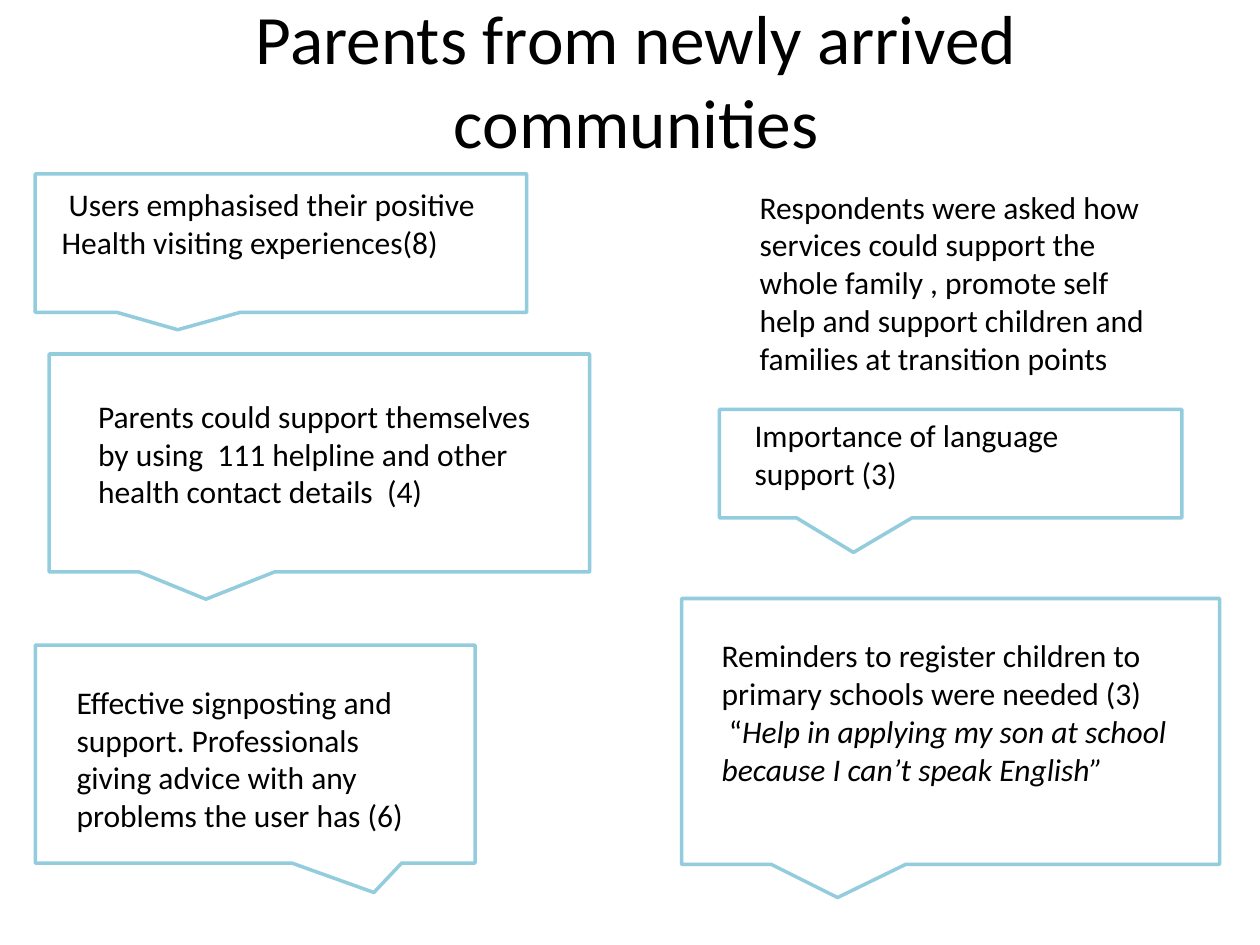
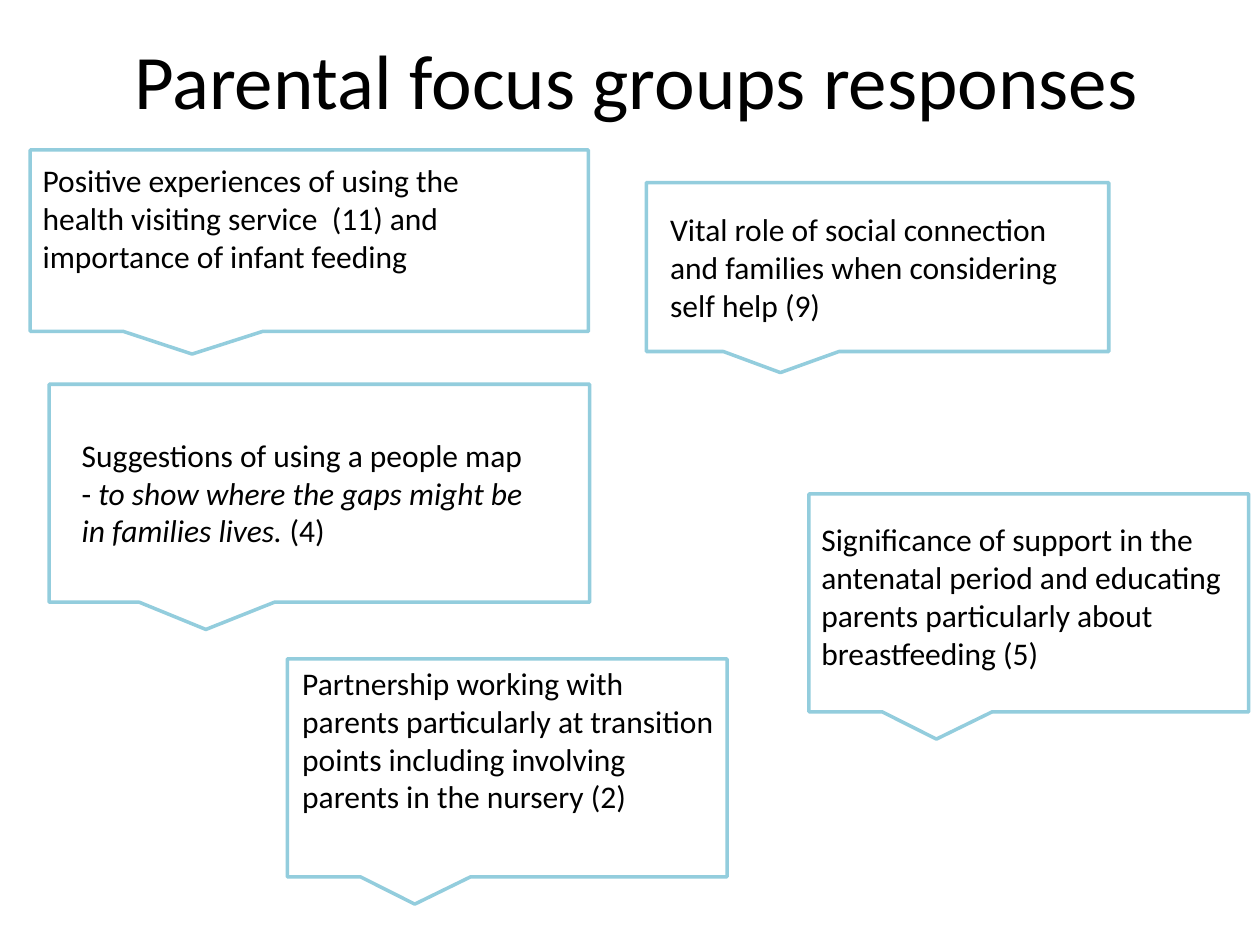
from dataclasses import dataclass
from typing import NamedTuple, Optional

from pptx import Presentation
from pptx.dml.color import RGBColor
from pptx.enum.shapes import MSO_SHAPE as Shape
from pptx.enum.text import MSO_ANCHOR as Anchor, MSO_AUTO_SIZE as AutoSize, PP_ALIGN as Align
from pptx.util import Inches, Pt

# Shared look
BLACK = RGBColor(0x00, 0x00, 0x00)
SKY = RGBColor(0x93, 0xCD, 0xDD)
FONT = "Calibri"
BODY_SIZE = 18
LINE_WIDTH = 2
TITLE_ONLY = 5

# Grid of 100 columns by 75 rows
WIDTH, HEIGHT = Inches(10), Inches(7.5)
COL, ROW = WIDTH / 100, HEIGHT / 75


class Box(NamedTuple):
    col: float
    row: float
    cols: float
    rows: float

    def lengths(self) -> tuple[int, int, int, int]:
        return (round(self.col * COL), round(self.row * ROW),
                round(self.cols * COL), round(self.rows * ROW))


class Run(NamedTuple):
    text: str
    italic: bool = False


@dataclass
class Note:
    """Text with an optional speech bubble around it."""
    box: Box
    paragraphs: list[list[Run]]
    bubble: Optional[Box] = None
    tip: tuple[float, float] = (-0.21, 0.625)


@dataclass
class Page:
    title: str
    title_size: float
    notes: list[Note]


TITLE_BOX = Box(5.5, 0, 90, 12.5)

PAGES = [
    Page("Parents from newly arrived communities", 39.6, [
        Note(Box(3.9, 14.2, 41.3, 7.1),
             [[Run(" Users emphasised their positive Health visiting experiences(8)")]],
             Box(2.8, 13.8, 39, 11)),
        Note(Box(6.8, 31, 36.9, 10.1),
             [[Run("Parents could support themselves by using  111 helpline and other "
                   "health contact details  (4)")]],
             Box(3.9, 28.1, 42.9, 17.3)),
        Note(Box(5.1, 53.7, 30.3, 13.1),
             [[Run("Effective signposting and support. Professionals giving advice with "
                   "any problems the user has (6)")]],
             Box(2.8, 51.2, 34.9, 17.3), tip=(0.27, 0.635)),
        Note(Box(59.3, 14.4, 33.1, 16.2),
             [[Run("Respondents were asked how services could support the whole family , "
                   "promote self help and support children and families at transition points")]]),
        Note(Box(58.9, 32.5, 33.1, 7.1),
             [[Run("Importance of language support (3)")]],
             Box(57.1, 32.5, 36.7, 8.6), tip=(-0.21, 0.82)),
        Note(Box(56.3, 50, 38.4, 13.1),
             [[Run("Reminders to register children to primary schools were needed (3)")],
              [Run(" “"),
               Run("Help in applying my son at school because I can’t speak English”", True)]],
             Box(54.1, 47.5, 42.7, 21.1)),
    ]),
    Page("Parental focus groups responses", 44, [
        Note(Box(2.4, 12.3, 41.3, 10.1),
             [[Run("Positive experiences of using the health visiting service  (11) and "
                   "importance of infant feeding")]],
             Box(2.4, 11.9, 44.3, 14.4)),
        Note(Box(5.5, 34.1, 38.1, 10.1),
             [[Run("Suggestions of using a people map - "),
               Run("to show where the gaps might be in families lives. ", True),
               Run("(4)")]],
             Box(3.9, 30.5, 42.9, 17.3)),
        Note(Box(52.2, 16.2, 33.1, 10.1),
             [[Run("Vital role of social connection and families when considering "
                   "self help (9)")]],
             Box(51.3, 14.5, 36.7, 13.4)),
        Note(Box(23, 52.2, 35.1, 13.1),
             [[Run("Partnership working with parents particularly at transition points "
                   "including involving parents in the nursery (2)")]],
             Box(22.8, 52.3, 34.9, 17.3)),
        Note(Box(64.2, 40.8, 35.8, 13.1),
             [[Run("Significance of support in the antenatal period and educating parents "
                   "particularly about breastfeeding (5)")]],
             Box(64.2, 39.2, 34.9, 17.3)),
    ]),
]


def set_font(p, size: float) -> None:
    p.font.name = FONT
    p.font.size = Pt(size)
    p.font.color.rgb = BLACK


def add_title(s, text: str, size: float) -> None:
    sp = s.shapes.title
    sp.left, sp.top, sp.width, sp.height = TITLE_BOX.lengths()
    tf = sp.text_frame
    tf.text = text
    tf.word_wrap = True
    tf.auto_size = AutoSize.NONE
    tf.vertical_anchor = Anchor.MIDDLE
    p = tf.paragraphs[0]
    p.alignment = Align.CENTER
    set_font(p, size)


def add_bubble(s, box: Box, tip: tuple[float, float]) -> None:
    sp = s.shapes.add_shape(Shape.RECTANGULAR_CALLOUT, *box.lengths())
    sp.adjustments[0], sp.adjustments[1] = tip
    sp.shadow.inherit = False
    sp.fill.background()
    sp.line.color.rgb = SKY
    sp.line.width = Pt(LINE_WIDTH)


def add_text(s, note: Note) -> None:
    tf = s.shapes.add_textbox(*note.box.lengths()).text_frame
    tf.word_wrap = True
    tf.auto_size = AutoSize.SHAPE_TO_FIT_TEXT
    for i, runs in enumerate(note.paragraphs):
        p = tf.add_paragraph() if i else tf.paragraphs[0]
        set_font(p, BODY_SIZE)
        for run in runs:
            r = p.add_run()
            r.text = run.text
            if run.italic:
                r.font.italic = True


def add_page(prs, page: Page) -> None:
    s = prs.slides.add_slide(prs.slide_layouts[TITLE_ONLY])
    add_title(s, page.title, page.title_size)
    for note in page.notes:
        if note.bubble:
            add_bubble(s, note.bubble, note.tip)
        add_text(s, note)


def main() -> None:
    prs = Presentation()
    prs.slide_width, prs.slide_height = WIDTH, HEIGHT
    for page in PAGES:
        add_page(prs, page)
    prs.save("out.pptx")


if __name__ == "__main__":
    main()
